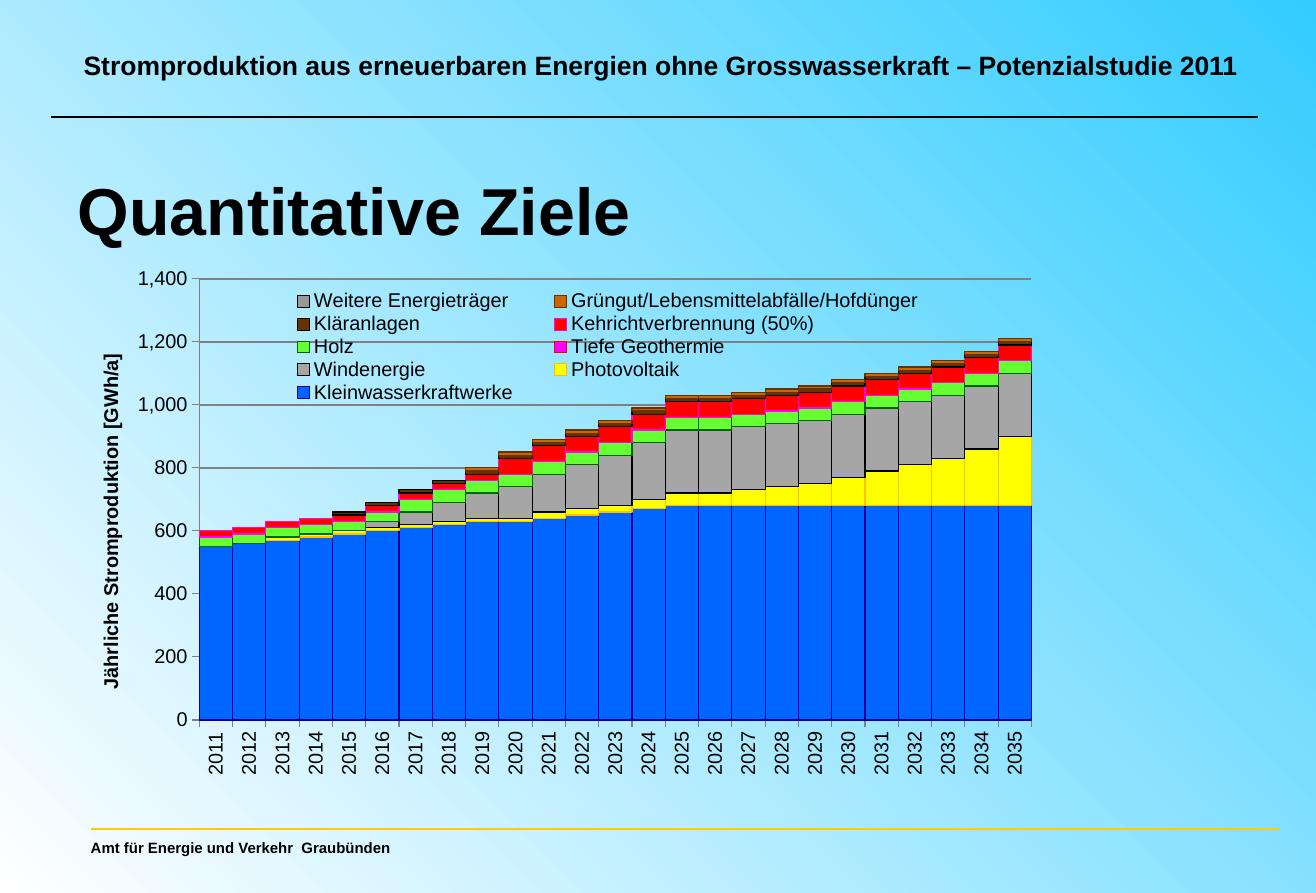
from typing import NamedTuple

from lxml import etree
from pptx import Presentation
from pptx import util as u
from pptx.chart.data import CategoryChartData
from pptx.dml.color import RGBColor
from pptx.enum import chart as ch
from pptx.enum import shapes, text
from pptx.oxml.ns import qn

PX = 914400 / 119.4
FONT = "Arial"
BLACK = RGBColor(0, 0, 0)
WHITE = RGBColor(255, 255, 255)
SKY = RGBColor(0x33, 0xCC, 0xFF)
GOLD = RGBColor(0xFF, 0xCC, 0x00)
GREY = RGBColor(0x80, 0x80, 0x80)
NAVY = RGBColor(0x00, 0x00, 0x99)
BLUE = RGBColor(0x00, 0x66, 0xFF)
YELLOW = RGBColor(0xFF, 0xFF, 0x00)
AMBER = RGBColor(0xFF, 0xC0, 0x00)
SILVER = RGBColor(0xA6, 0xA6, 0xA6)
PINK = RGBColor(0xFF, 0x00, 0xFF)
RED = RGBColor(0xFF, 0x00, 0x00)
LIME = RGBColor(0x66, 0xFF, 0x33)
GREEN = RGBColor(0x00, 0x66, 0x00)
BROWN = RGBColor(0x66, 0x33, 0x00)
RUST = RGBColor(0xCC, 0x66, 0x00)
ASH = RGBColor(0x99, 0x99, 0x99)


class Label(NamedTuple):
    words: str
    box: tuple[int, int, int, int]
    size: int
    align: text.PP_ALIGN


class Rule(NamedTuple):
    left: int
    right: int
    y: int
    color: RGBColor
    width: float


class Source(NamedTuple):
    name: str
    values: list[int]
    fill: RGBColor
    line: RGBColor


LABELS = [
    Label("Amt für Energie und Verkehr  Graubünden", (79, 833, 328, 30), 9,
          text.PP_ALIGN.LEFT),
    Label("Stromproduktion aus erneuerbaren Energien ohne Grosswasserkraft"
          " – Potenzialstudie 2011", (67, 43, 1188, 44), 16,
          text.PP_ALIGN.CENTER),
]
RULES = [Rule(91, 1279, 829, GOLD, 1), Rule(51, 1258, 117, BLACK, 0.75)]
YEARS = range(2011, 2036)
SOURCES = [
    Source("Kleinwasserkraftwerke",
           [*range(550, 631, 10), *range(630, 671, 10)] + [680] * 11,
           BLUE, NAVY),
    Source("Photovoltaik",
           [0] * 2 + [10] * 8 + [20] * 3
           + [30, 40, 40, 50, 60, 70, 90, 110, 130, 150, 180, 220],
           YELLOW, AMBER),
    Source("Windenergie", [0] * 5 + [*range(20, 200, 20)] + [200] * 11,
           SILVER, BLACK),
    Source("Tiefe Geothermie", [0] * 25, PINK, RED),
    Source("Holz", [30] * 6 + [40] * 19, LIME, GREEN),
    Source("Kehrichtverbrennung (50%)", [20] * 9 + [50] * 16, RED, PINK),
    Source("Kläranlagen", [0] * 4 + [10] * 21, BROWN, BLACK),
    Source("Grüngut/Lebensmittelabfälle/Hofdünger", [0] * 8 + [10] * 17,
           RUST, BROWN),
    Source("Weitere Energieträger", [0] * 25, ASH, BLACK),
]


def px(n: float) -> int:
    return round(n * PX)


def style(font, size: int, bold: bool = False) -> None:
    font.name, font.size, font.bold = FONT, u.Pt(size), bold
    font.color.rgb = BLACK


def add_label(slide, label: Label) -> None:
    box = slide.shapes.add_textbox(*map(px, label.box))
    frame = box.text_frame
    frame.word_wrap = False
    frame.vertical_anchor = text.MSO_ANCHOR.MIDDLE
    para = frame.paragraphs[0]
    para.text, para.alignment = label.words, label.align
    style(para.font, label.size, True)


def add_rule(slide, rule: Rule) -> None:
    line = slide.shapes.add_connector(
        shapes.MSO_CONNECTOR.STRAIGHT,
        px(rule.left), px(rule.y), px(rule.right), px(rule.y))
    line.line.color.rgb, line.line.width = rule.color, u.Pt(rule.width)
    etree.SubElement(line._element.spPr, qn("a:effectLst"))


def place(node, index: int, **spots: float | str) -> None:
    """Give a chart part a fixed layout."""
    for old in node.findall(qn("c:layout")):
        node.remove(old)
    layout = etree.Element(qn("c:layout"))
    manual = etree.SubElement(layout, qn("c:manualLayout"))
    for key, val in spots.items():
        etree.SubElement(manual, qn(f"c:{key}")).set("val", str(val))
    node.insert(index, layout)


def turn(body) -> None:
    body.set("rot", "-5400000")
    body.set("vert", "horz")


def add_axis(axis) -> None:
    axis.major_tick_mark = ch.XL_TICK_MARK.OUTSIDE
    axis.format.line.color.rgb = GREY
    axis.format.line.width = u.Pt(0.75)
    style(axis.tick_labels.font, 12)


def add_graph(slide) -> None:
    data = CategoryChartData(number_format="#,##0")
    data.categories = [str(year) for year in YEARS]
    for item in SOURCES:
        data.add_series(item.name, item.values)
    chart = slide.shapes.add_chart(
        ch.XL_CHART_TYPE.COLUMN_STACKED, *map(px, (75, 250, 987, 555)),
        data).chart
    style(chart.font, 8)
    chart.has_title = False

    # Stacked columns
    plot = chart.plots[0]
    plot.gap_width, plot.overlap, plot.vary_by_categories = 0, 100, False
    for series, item in zip(plot.series, SOURCES):
        series.format.fill.solid()
        series.format.fill.fore_color.rgb = item.fill
        series.format.line.color.rgb = item.line
        series.format.line.width = u.Pt(0.75)
    place(chart._chartSpace.chart.plotArea, 0, layoutTarget="inner",
          xMode="edge", yMode="edge", x=0.126, y=0.052, w=0.843, h=0.795)

    # Axes
    years, power = chart.category_axis, chart.value_axis
    add_axis(years)
    add_axis(power)
    turn(years._element.txPr.bodyPr)
    power.minimum_scale, power.maximum_scale, power.major_unit = 0, 1400, 200
    power.tick_labels.number_format = "#,##0"
    power.tick_labels.number_format_is_linked = False
    power.has_major_gridlines = True
    grid = power.major_gridlines.format.line
    grid.color.rgb, grid.width = GREY, u.Pt(1)
    frame = power.axis_title.text_frame
    frame.text = "Jährliche Stromproduktion [GWh/a]"
    style(frame.paragraphs[0].font, 12, True)
    turn(frame._txBody.bodyPr)
    place(power.axis_title._element, 1, xMode="edge", yMode="edge",
          x=0.02, y=0.18)

    # Legend
    chart.has_legend = True
    legend = chart.legend
    legend.position = ch.XL_LEGEND_POSITION.RIGHT
    legend.include_in_layout = False
    style(legend.font, 12)
    place(legend._element, 1, xMode="edge", yMode="edge",
          x=0.19, y=0.07, w=0.7, h=0.21)


def main() -> None:
    deck = Presentation()
    deck.slide_width, deck.slide_height = u.Inches(11.02), u.Inches(7.48)
    slide = deck.slides.add_slide(deck.slide_layouts[5])

    # Background
    fill = slide.background.fill
    fill.gradient()
    fill.gradient_angle = 45
    for stop, color in zip(fill.gradient_stops, (WHITE, SKY)):
        stop.color.rgb = color

    # Title
    title = slide.shapes.title
    title.left, title.top, title.width, title.height = map(
        px, (66, 155, 1223, 112))
    frame = title.text_frame
    frame.text = "Quantitative Ziele"
    frame.vertical_anchor = text.MSO_ANCHOR.TOP
    frame.margin_top = px(14)
    para = frame.paragraphs[0]
    para.alignment = text.PP_ALIGN.LEFT
    style(para.font, 40, True)

    # Header, footer and chart
    for label in LABELS:
        add_label(slide, label)
    for rule in RULES:
        add_rule(slide, rule)
    add_graph(slide)
    deck.save("out.pptx")


if __name__ == "__main__":
    main()
